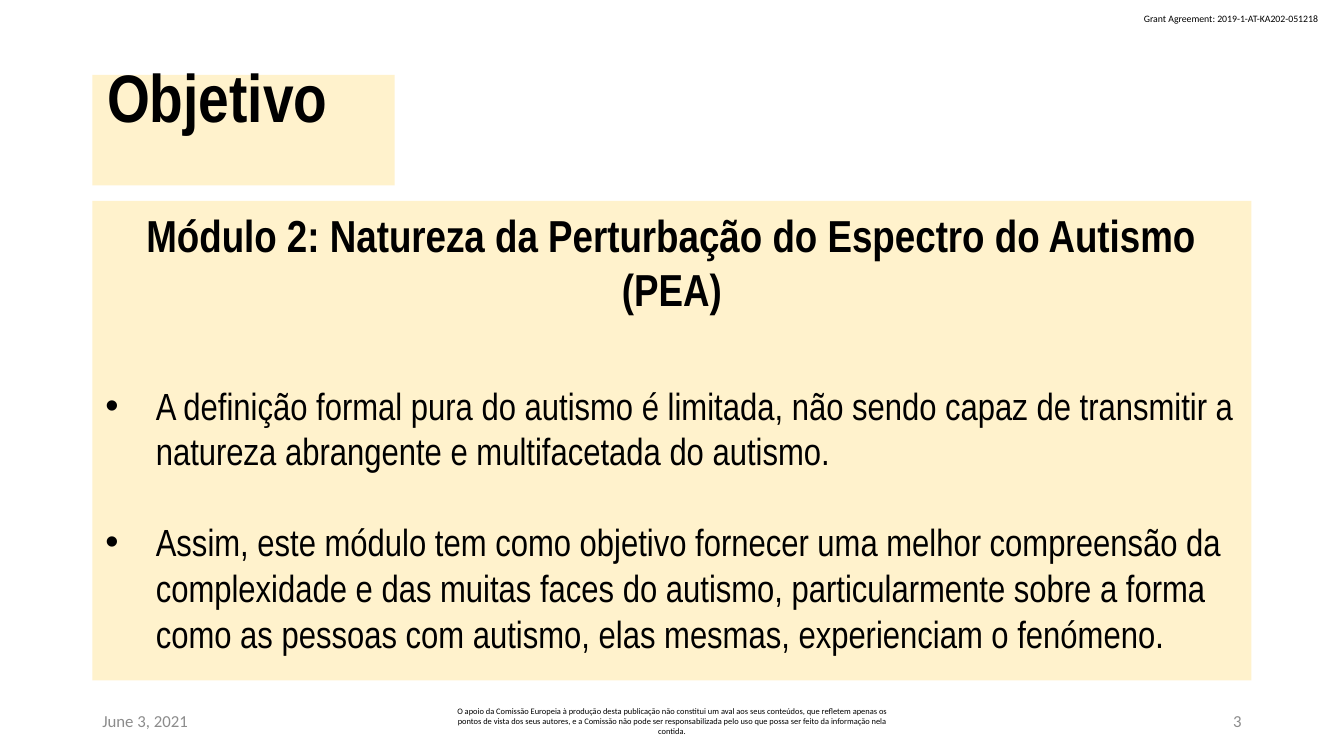
from lxml import etree
from pptx import Presentation
from pptx.dml.color import RGBColor
from pptx.enum import shapes, text
from pptx.oxml import ns
from pptx.util import Pt

CREAM, BLACK, GRAY = "FFF2CC", "000000", "8C8C8C"
LEFT, CENTER, RIGHT = text.PP_ALIGN.LEFT, text.PP_ALIGN.CENTER, text.PP_ALIGN.RIGHT
HEADING = "Módulo 2: Natureza da Perturbação do Espectro do Autismo (PEA)"
BULLETS = [
    (48, "A definição formal pura do autismo é limitada, não sendo capaz de transmitir a "
         "natureza abrangente e multifacetada do autismo", 27),
    (32.5, "Assim, este módulo tem como objetivo fornecer uma melhor compreensão da "
           "complexidade e das muitas faces do autismo, particularmente sobre a forma "
           "como as pessoas com autismo, elas mesmas, experienciam o fenómeno", 28),
]
DISCLAIMER = (
    "O apoio da Comissão Europeia à produção desta publicação não constitui um aval aos "
    "seus conteúdos, que refletem apenas os pontos de vista dos seus autores, e a Comissão "
    "não pode ser responsabilizada pelo uso que possa ser feito da informação nela contida."
)


def color(value):
    return RGBColor.from_string(value)


def format_paragraph(paragraph, size, name, ink=BLACK, bold=False, alignment=LEFT):
    paragraph.alignment = alignment
    font = paragraph.font
    font.size, font.name, font.bold = Pt(size), name, bold
    font.color.rgb = color(ink)


def set_margins(frame, left, top, right, bottom):
    frame.margin_left, frame.margin_top = Pt(left), Pt(top)
    frame.margin_right, frame.margin_bottom = Pt(right), Pt(bottom)


def add_bullet(paragraph, indent):
    properties = paragraph._p.get_or_add_pPr()
    properties.set("marL", str(Pt(indent)))
    properties.set("indent", str(-Pt(indent)))
    etree.SubElement(properties, ns.qn("a:buFont")).set("typeface", "Arial")
    etree.SubElement(properties, ns.qn("a:buChar")).set("char", "•")


def add_label(slide, box, content, size, ink=BLACK, alignment=LEFT, wrap=True):
    shape = slide.shapes.add_textbox(*map(Pt, box))
    frame = shape.text_frame
    frame.word_wrap = wrap
    frame.vertical_anchor = text.MSO_ANCHOR.MIDDLE if wrap else text.MSO_ANCHOR.TOP
    frame.text = content
    format_paragraph(frame.paragraphs[0], size, "Calibri", ink, alignment=alignment)


def add_footer(slide, left, top, width, height):
    side, middle = 216, 324
    add_label(slide, (left, top, side, height), "June 3, 2021", 12, GRAY)
    add_label(slide, (left + (width - middle) / 2, top, middle, height),
              DISCLAIMER, 6, alignment=CENTER)
    add_label(slide, (left + width - side, top, side, height), "3", 12, GRAY, RIGHT)


def add_title(slide, left, top, width, height):
    title = slide.shapes.title
    title.left, title.top, title.width, title.height = map(Pt, (left, top, width, height))
    title.fill.solid()
    title.fill.fore_color.rgb = color(CREAM)
    frame = title.text_frame
    frame.text = "Objetivo"
    frame.word_wrap = True
    frame.auto_size = text.MSO_AUTO_SIZE.NONE
    frame.vertical_anchor = text.MSO_ANCHOR.MIDDLE
    set_margins(frame, 10.5, 5, 9, 55)
    format_paragraph(frame.paragraphs[0], 48, "Arial Narrow", bold=True)


def add_objective(slide, left, top, width, height):
    panel = slide.shapes.add_shape(shapes.MSO_SHAPE.RECTANGLE,
                                   *map(Pt, (left, top, width, height)))
    panel.shadow.inherit = False
    panel.fill.solid()
    panel.fill.fore_color.rgb = color(CREAM)
    panel.line.fill.background()
    frame = panel.text_frame
    frame.word_wrap = True
    frame.vertical_anchor = text.MSO_ANCHOR.TOP
    set_margins(frame, 9.36, 5, 9.36, 5)
    frame.text = HEADING
    format_paragraph(frame.paragraphs[0], 32, "Arial Narrow", bold=True, alignment=CENTER)
    for gap, content, stop_size in BULLETS:
        paragraph = frame.add_paragraph()
        paragraph.space_before = Pt(gap)
        add_bullet(paragraph, 36)
        format_paragraph(paragraph, 27, "Arial Narrow")
        paragraph.add_run().text = content
        stop = paragraph.add_run()
        stop.text = "."
        stop.font.size = Pt(stop_size)


def main():
    presentation = Presentation()
    presentation.slide_width, presentation.slide_height = Pt(960), Pt(540)
    slide = presentation.slides.add_slide(presentation.slide_layouts[5])
    left, width = 66, 828
    add_label(slide, (810, 5.76, 142, 16), "Grant Agreement: 2019-1-AT-KA202-051218", 7, wrap=False)
    add_footer(slide, left, 500.5, width, 28.75)
    add_title(slide, left, 53.5, 216, 79)
    add_objective(slide, left, 143.5, width, 342.5)
    presentation.save("out.pptx")


if __name__ == "__main__":
    main()
